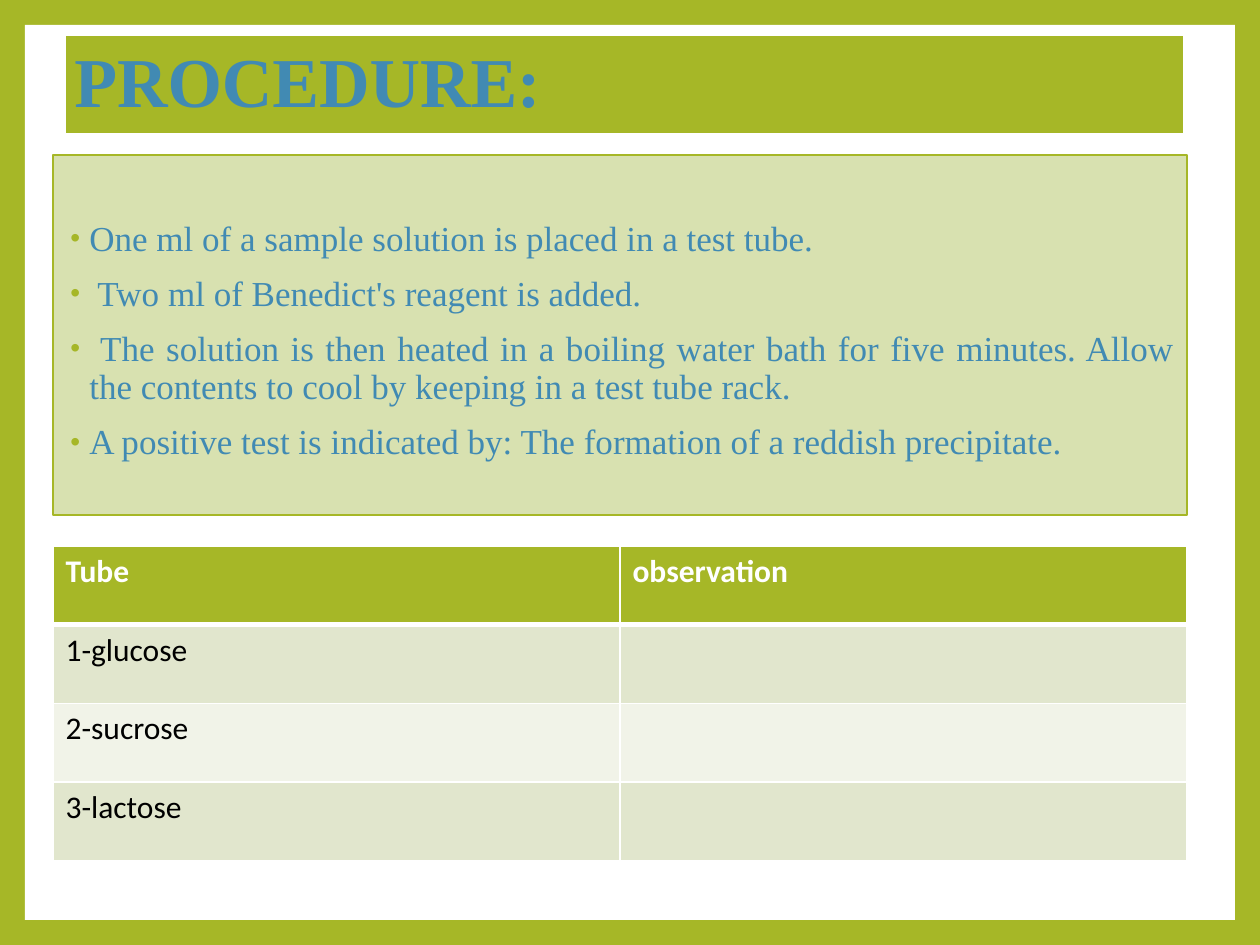
from dataclasses import dataclass

from lxml.etree import SubElement
from pptx import Presentation
from pptx.dml.color import RGBColor
from pptx.enum.shapes import MSO_SHAPE
from pptx.enum.text import MSO_ANCHOR, PP_ALIGN
from pptx.oxml.ns import qn
from pptx.util import Emu, Pt

PX_PER_INCH = 126


@dataclass(frozen=True)
class Theme:
    green: str = "A6B727"
    pale_green: str = "D8E1B0"
    band_dark: str = "E1E6CD"
    band_light: str = "F1F3E8"
    blue: str = "418AB3"
    white: str = "FFFFFF"
    black: str = "000000"
    serif: str = "Times New Roman"
    sans: str = "Calibri"
    title_size: int = 40
    body_size: int = 20
    table_size: int = 18


THEME = Theme()
STEPS = [
    "One ml of a sample solution is placed in a test tube.",
    " Two ml of Benedict's reagent is added.",
    " The solution is then heated in a boiling water bath for five minutes. "
    "Allow the contents to cool by keeping in a test tube rack.",
    "A positive test is indicated by: The formation of a reddish precipitate.",
]
ROWS = [["Tube", "observation"], ["1-glucose", ""], ["2-sucrose", ""], ["3-lactose", ""]]


def px(length):
    return Emu(length * 914400 // PX_PER_INCH)


def color(value):
    return RGBColor.from_string(value)


def add_text(paragraph, text, font_name, size, text_color, bold=False):
    run = paragraph.add_run()
    run.text = text
    run.font.name = font_name
    run.font.size = Pt(size)
    run.font.bold = bold
    run.font.color.rgb = color(text_color)


def add_panel(slide, left, top, width, height, fill, line=None, line_width=0):
    panel = slide.shapes.add_shape(
        MSO_SHAPE.RECTANGLE, px(left), px(top), px(width), px(height))
    panel.shadow.inherit = False
    panel.fill.solid()
    panel.fill.fore_color.rgb = color(fill)
    if line:
        panel.line.color.rgb = color(line)
        panel.line.width = Pt(line_width)
    else:
        panel.line.fill.background()
    return panel


def add_title(slide, text):
    panel = add_panel(slide, 62, 32, 1125, 105, THEME.green, THEME.white, 4.25)
    frame = panel.text_frame
    frame.word_wrap = True
    frame.vertical_anchor = MSO_ANCHOR.MIDDLE
    paragraph = frame.paragraphs[0]
    paragraph.alignment = PP_ALIGN.LEFT
    paragraph.line_spacing = 0.9
    add_text(paragraph, text, THEME.serif, THEME.title_size, THEME.blue, True)


def add_bullet(paragraph):
    properties = paragraph._p.get_or_add_pPr()
    properties.set("marL", str(px(24)))
    properties.set("indent", str(-px(19)))
    bullet_color = SubElement(properties, qn("a:buClr"))
    SubElement(bullet_color, qn("a:srgbClr"), val=THEME.green)
    SubElement(properties, qn("a:buSzPct"), val="80000")
    SubElement(properties, qn("a:buFont"), typeface="Arial")
    SubElement(properties, qn("a:buChar"), char="•")


def add_steps(slide, steps):
    panel = add_panel(slide, 53, 155, 1134, 360, THEME.pale_green, THEME.green, 0.79)
    frame = panel.text_frame
    frame.word_wrap = True
    frame.vertical_anchor = MSO_ANCHOR.TOP
    frame.margin_top = px(66)
    for index, step in enumerate(steps):
        paragraph = frame.add_paragraph() if index else frame.paragraphs[0]
        add_bullet(paragraph)
        paragraph.alignment = PP_ALIGN.JUSTIFY
        paragraph.line_spacing = 0.9
        paragraph.space_before = Pt(10 if index else 0)
        add_text(paragraph, step, THEME.serif, THEME.body_size, THEME.blue)


def add_borders(cell, widths):
    properties = cell._tc.get_or_add_tcPr()
    for side, width in widths.items():
        border = SubElement(properties, qn(f"a:ln{side}"), w=str(Pt(width)))
        fill = SubElement(border, qn("a:solidFill"))
        SubElement(fill, qn("a:srgbClr"), val=THEME.white)


def add_observations(slide, rows):
    table = slide.shapes.add_table(
        len(rows), len(rows[0]), px(53), px(546), px(1134), px(315)).table
    table.horz_banding = False
    bands = [THEME.band_light, THEME.band_dark]
    for row_index, row in enumerate(rows):
        header = row_index == 0
        widths = {"L": 1, "R": 1, "T": 3 if row_index == 1 else 1, "B": 3 if header else 1}
        for column_index, text in enumerate(row):
            cell = table.cell(row_index, column_index)
            add_borders(cell, widths)
            cell.fill.solid()
            cell.fill.fore_color.rgb = color(THEME.green if header else bands[row_index % 2])
            if text:
                add_text(cell.text_frame.paragraphs[0], text, THEME.sans, THEME.table_size,
                         THEME.white if header else THEME.black, header)


def main():
    presentation = Presentation()
    presentation.slide_width = px(1260)
    presentation.slide_height = px(945)
    slide = presentation.slides.add_slide(presentation.slide_layouts[6])
    slide.background.fill.solid()
    slide.background.fill.fore_color.rgb = color(THEME.green)
    add_panel(slide, 25, 25, 1210, 895, THEME.white)
    add_steps(slide, STEPS)
    add_observations(slide, ROWS)
    add_title(slide, "PROCEDURE:")
    presentation.save("out.pptx")


if __name__ == "__main__":
    main()
